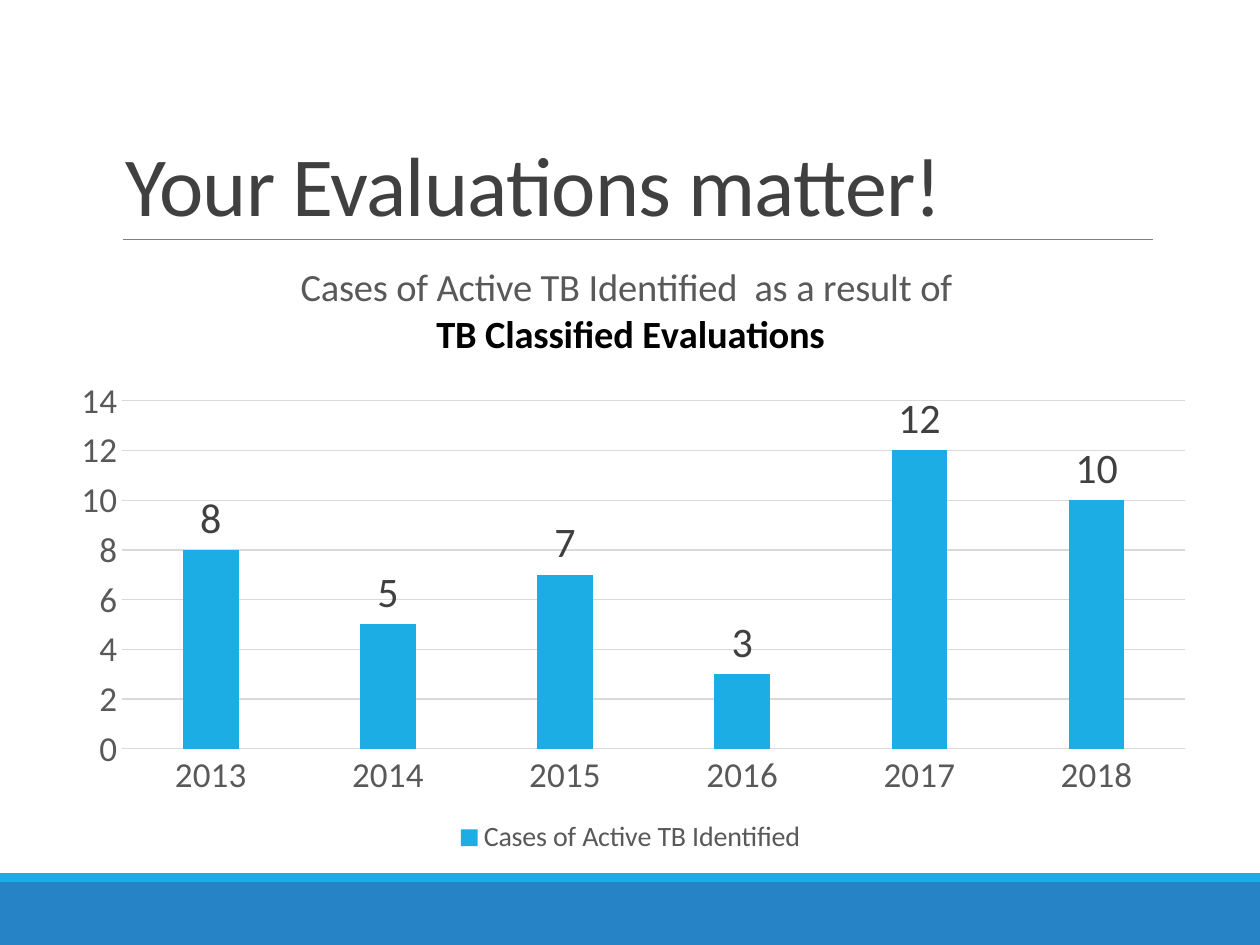
"""Build a slide with a column chart of active TB cases by year."""
from pptx import Presentation
from pptx.chart.data import CategoryChartData
from pptx.dml.color import RGBColor
from pptx.enum.chart import XL_CHART_TYPE, XL_LABEL_POSITION, XL_LEGEND_POSITION, XL_TICK_MARK
from pptx.enum.shapes import MSO_CONNECTOR, MSO_SHAPE
from pptx.enum.text import MSO_ANCHOR, PP_ALIGN
from pptx.oxml import parse_xml
from pptx.oxml.ns import nsdecls, qn
from pptx.util import Inches, Pt

COLUMN = XL_CHART_TYPE.COLUMN_CLUSTERED
OUTSIDE = XL_LABEL_POSITION.OUTSIDE_END
BOTTOM = XL_LEGEND_POSITION.BOTTOM
NO_TICK = XL_TICK_MARK.NONE
STRAIGHT = MSO_CONNECTOR.STRAIGHT
RECT = MSO_SHAPE.RECTANGLE
LOW = MSO_ANCHOR.BOTTOM
CENTER = PP_ALIGN.CENTER

TITLE = "Your Evaluations matter!"
HEADS = [("Cases of Active TB Identified  as a result of ", "gray", False),
         ("TB Classified Evaluations", "black", True)]
SERIES = "Cases of Active TB Identified"
CASES = {"2013": 8, "2014": 5, "2015": 7, "2016": 3, "2017": 12, "2018": 10}
BANDS = [("blue", 7, 0.5), ("sky", 6.93, 0.07)]
PLOT = {"x": 0.06, "y": 0.26, "w": 0.92, "h": 0.56}
THEME = {
    "font": "Calibri",
    "color": {"blue": "2683C6", "sky": "1CADE4", "rule": "808080", "dark": "404040",
              "gray": "595959", "grid": "D9D9D9", "black": "000000"},
    "size": {"title": 48, "head": 22, "axis": 20, "legend": 16, "label": 24},
}


def color(name):
    """Return a theme colour."""
    return RGBColor.from_string(THEME["color"][name])


def style(font, size, tone, bold=False):
    """Apply theme type to a font."""
    font.name, font.size, font.bold = THEME["font"], Pt(THEME["size"][size]), bold
    font.color.rgb = color(tone)


def stroke(line, tone, width):
    """Set the colour and width of a line."""
    line.color.rgb, line.width = color(tone), Pt(width)


def add_frame(slide):
    """Draw the bottom bands and the title rule."""
    for tone, top, height in BANDS:
        band = slide.shapes.add_shape(RECT, 0, Inches(top), Inches(10), Inches(height))
        band.shadow.inherit = False
        band.fill.solid()
        band.fill.fore_color.rgb = color(tone)
        band.line.fill.background()
    rule = slide.shapes.add_connector(STRAIGHT, Inches(0.98), Inches(1.9), Inches(9.15), Inches(1.9))
    stroke(rule.line, "rule", 0.5)
    rule._element.spPr.append(parse_xml(f"<a:effectLst {nsdecls('a')}/>"))


def add_title(slide):
    """Write the slide title."""
    box = slide.shapes.add_textbox(Inches(0.9), Inches(0.31), Inches(8.25), Inches(1.59))
    frame = box.text_frame
    frame.word_wrap, frame.vertical_anchor = True, LOW
    para = frame.paragraphs[0]
    para.line_spacing = 0.85
    run = para.add_run()
    run.text = TITLE
    style(run.font, "title", "dark")
    run.font._element.set("spc", "-50")


def set_plot(chart):
    """Fix the inner plot area within the chart."""
    area = chart._chartSpace.chart.plotArea
    for old in area.findall(qn("c:layout")):
        area.remove(old)
    modes = "".join(f'<c:{key}Mode val="edge"/>' for key in "xy")
    sides = "".join(f'<c:{key} val="{val}"/>' for key, val in PLOT.items())
    area.insert(0, parse_xml(
        f'<c:layout {nsdecls("c")}><c:manualLayout><c:layoutTarget val="inner"/>'
        f"{modes}{sides}</c:manualLayout></c:layout>"))


def add_cases(slide):
    """Add the chart of cases."""
    data = CategoryChartData()
    data.categories = list(CASES)
    data.add_series(SERIES, list(CASES.values()))
    chart = slide.shapes.add_chart(
        COLUMN, Inches(0.42), Inches(1.9), Inches(9.17), Inches(4.93), data).chart
    chart.font.name = THEME["font"]

    frame = chart.chart_title.text_frame
    for index, (text, tone, bold) in enumerate(HEADS):
        para = frame.add_paragraph() if index else frame.paragraphs[0]
        para.alignment = CENTER
        run = para.add_run()
        run.text = text
        style(run.font, "head", tone, bold)
    chart.chart_title.include_in_layout = False

    chart.has_legend = True
    chart.legend.position = BOTTOM
    chart.legend.include_in_layout = False
    style(chart.legend.font, "legend", "gray")

    years, count = chart.category_axis, chart.value_axis
    for axis in (years, count):
        axis.major_tick_mark = axis.minor_tick_mark = NO_TICK
        style(axis.tick_labels.font, "axis", "gray")
    stroke(years.format.line, "grid", 0.75)
    count.format.line.fill.background()
    count.minimum_scale, count.maximum_scale, count.major_unit = 0, 14, 2
    stroke(count.major_gridlines.format.line, "grid", 0.75)

    plot = chart.plots[0]
    plot.gap_width, plot.overlap, plot.vary_by_categories = 219, -27, False
    bars = plot.series[0]
    bars.format.fill.solid()
    bars.format.fill.fore_color.rgb = color("sky")
    labels = bars.data_labels
    labels.show_value, labels.position = True, OUTSIDE
    style(labels.font, "label", "dark")
    set_plot(chart)


def main():
    """Build and save the slide."""
    deck = Presentation()
    deck.slide_width, deck.slide_height = Inches(10), Inches(7.5)
    slide = deck.slides.add_slide(deck.slide_layouts[6])
    add_frame(slide)
    add_title(slide)
    add_cases(slide)
    deck.save("out.pptx")


if __name__ == "__main__":
    main()
